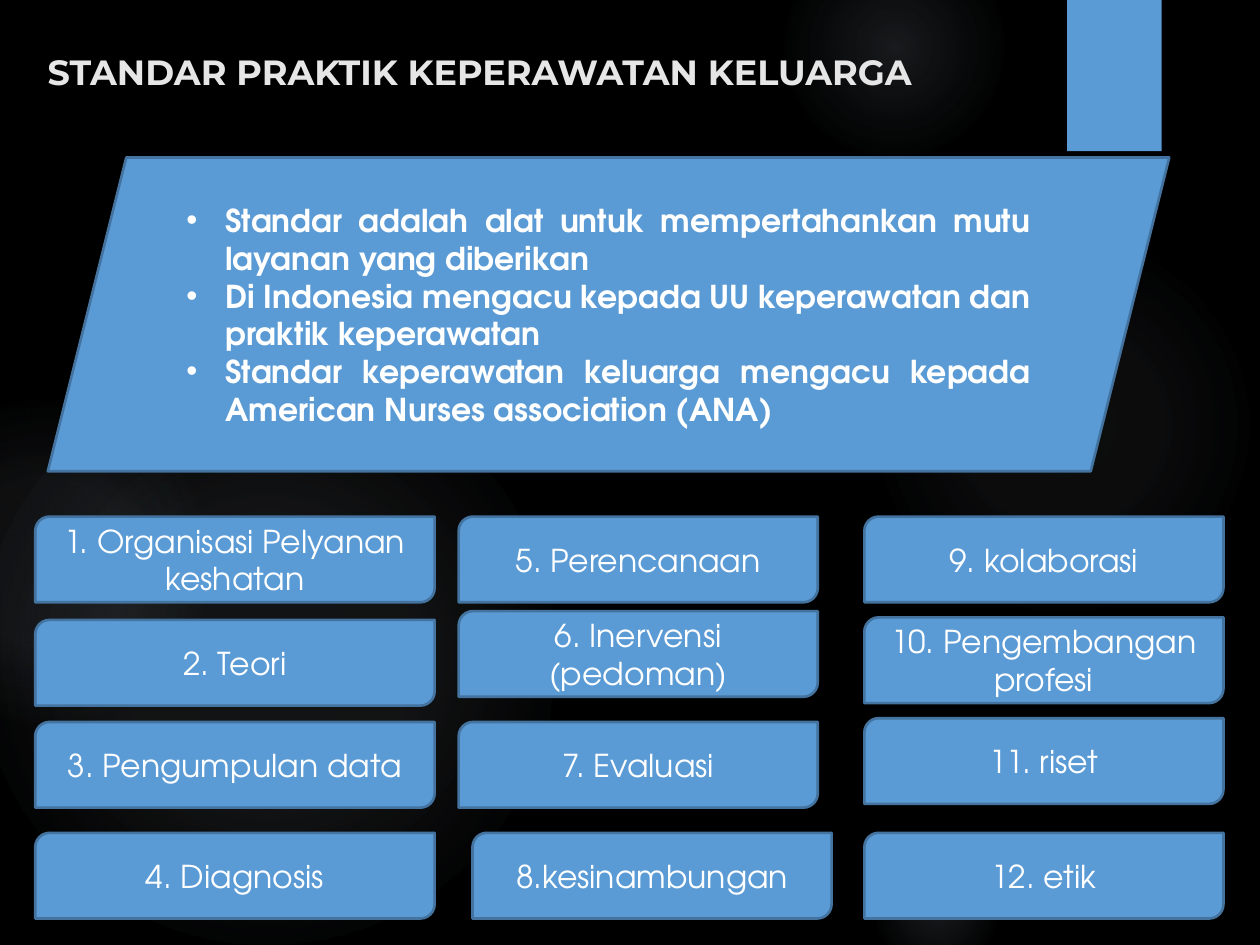
from dataclasses import dataclass

import pptx
import pptx.dml.color
import pptx.enum.shapes
import pptx.enum.text
import pptx.oxml
import pptx.oxml.ns
import pptx.util
from pptx.util import Inches

KIND = pptx.enum.shapes.MSO_SHAPE
ALIGN = pptx.enum.text.PP_ALIGN
ANCHOR = pptx.enum.text.MSO_ANCHOR
NS = pptx.oxml.ns.nsdecls("a")
BODY = "TeX Gyre Adventor"
BLUE, EDGE, WHITE, GLOW = "5B9BD5", "43739E", "FFFFFF", "ADB9CA"


@dataclass
class Box:
    left: float
    top: float
    width: float
    height: float


@dataclass
class Orb:
    left: float
    top: float
    size: float
    stops: tuple


@dataclass
class Column:
    left: float
    width: float
    cards: tuple


ORBS = (
    Orb(6.89, 1.83, 3.08, ((0, 7), (36, 6), (69, 0))),
    Orb(6.22, -0.5, 1.75, ((0, 14), (36, 7), (73, 0))),
    Orb(6.89, 6.67, 1.08, ((0, 14), (36, 7), (66, 0))),
    Orb(-0.17, 2.92, 4.58, ((0, 11), (36, 10), (75, 0))),
    Orb(-0.92, 3.17, 2.58, ((0, 8), (36, 8), (72, 0))),
)
POINTS = (
    "Standar adalah alat untuk mempertahankan mutu layanan yang diberikan",
    "Di Indonesia mengacu kepada UU keperawatan dan praktik keperawatan",
    "Standar keperawatan keluarga mengacu kepada American Nurses association (ANA)",
)
COLUMNS = (
    Column(0.28, 3.17, (
        ("1. Organisasi Pelyanan keshatan", 4.1, 0),
        ("2. Teori", 4.92, 0),
        ("3. Pengumpulan data", 5.73, 0),
        ("4. Diagnosis", 6.61, 0))),
    Column(3.64, 2.85, (
        ("5. Perencanaan", 4.1, 0),
        ("6. Inervensi (pedoman)", 4.85, 0),
        ("7. Evaluasi", 5.73, 0),
        ("8.kesinambungan", 6.61, 0.11))),
    Column(6.86, 2.85, (
        ("9. kolaborasi", 4.1, 0),
        ("10. Pengembangan profesi", 4.9, 0),
        ("11. riset", 5.7, 0),
        ("12. etik", 6.61, 0))),
)


def color(code: str) -> pptx.dml.color.RGBColor:
    return pptx.dml.color.RGBColor.from_string(code)


def place(slide, kind, box: Box, edge: str = ""):
    shape = slide.shapes.add_shape(
        kind, Inches(box.left), Inches(box.top), Inches(box.width), Inches(box.height))
    shape.shadow.inherit = False
    shape.fill.solid()
    shape.fill.fore_color.rgb = color(BLUE)
    if edge:
        shape.line.color.rgb = color(edge)
        shape.line.width = pptx.util.Pt(1.5)
    else:
        shape.line.fill.background()
    return shape


def style(frame, size: float, name: str, code: str, bold: bool, align) -> None:
    frame.word_wrap = True
    for para in frame.paragraphs:
        para.alignment = align
        for run in para.runs:
            font = run.font
            font.size, font.name, font.bold = pptx.util.Pt(size), name, bold
            font.color.rgb = color(code)


def draw_orb(slide, orb: Orb) -> None:
    shape = place(slide, KIND.OVAL, Box(orb.left, orb.top, orb.size, orb.size))
    stops = "".join(
        f'<a:gs pos="{pos * 1000}"><a:srgbClr val="{GLOW}">'
        f'<a:alpha val="{alpha * 1000}"/></a:srgbClr></a:gs>'
        for pos, alpha in orb.stops)
    grad = pptx.oxml.parse_xml(
        f'<a:gradFill {NS} rotWithShape="1"><a:gsLst>{stops}</a:gsLst>'
        '<a:path path="circle"><a:fillToRect l="50000" t="50000" r="50000" b="50000"/>'
        '</a:path></a:gradFill>')
    props = shape._element.spPr
    props.replace(props.find(pptx.oxml.ns.qn("a:solidFill")), grad)


def draw_tab(slide) -> None:
    shape = place(slide, KIND.RECTANGLE, Box(8.47, 0, 0.75, 1.2))
    shade = pptx.oxml.parse_xml(
        f'<a:outerShdw {NS} blurRad="{pptx.util.Pt(3)}" dist="{pptx.util.Pt(2)}" '
        'dir="5400000" rotWithShape="0"><a:srgbClr val="000000">'
        '<a:alpha val="45000"/></a:srgbClr></a:outerShdw>')
    shape._element.spPr.find(pptx.oxml.ns.qn("a:effectLst")).append(shade)


def draw_title(slide) -> None:
    box = slide.shapes.add_textbox(Inches(0.28), Inches(0.35), Inches(7.72), Inches(0.55))
    box.text_frame.text = "STANDAR PRAKTIK KEPERAWATAN KELUARGA"
    style(box.text_frame, 20, "Montserrat", "E7E6E6", True, ALIGN.LEFT)


def draw_panel(slide) -> None:
    frame = place(slide, KIND.PARALLELOGRAM, Box(0.38, 1.25, 8.9, 2.49), EDGE).text_frame
    frame.text = "\n".join(POINTS)
    frame.vertical_anchor = ANCHOR.MIDDLE
    style(frame, 18, BODY, WHITE, True, ALIGN.JUSTIFY)
    for para in frame.paragraphs:
        props = para._p.get_or_add_pPr()
        props.set("marL", str(Inches(0.31)))
        props.set("indent", str(-Inches(0.31)))
        props.append(pptx.oxml.parse_xml(f'<a:buFont {NS} typeface="Arial"/>'))
        props.append(pptx.oxml.parse_xml(f'<a:buChar {NS} char="•"/>'))


def draw_column(slide, col: Column) -> None:
    for text, top, shift in col.cards:
        box = Box(col.left + shift, top, col.width, 0.68)
        frame = place(slide, KIND.ROUND_2_DIAG_RECTANGLE, box, EDGE).text_frame
        frame.text = text
        frame.vertical_anchor = ANCHOR.MIDDLE
        style(frame, 18, BODY, WHITE, False, ALIGN.CENTER)


def main() -> None:
    deck = pptx.Presentation()
    deck.slide_width, deck.slide_height = Inches(10), Inches(7.5)
    slide = deck.slides.add_slide(deck.slide_layouts[6])
    slide.background.fill.solid()
    slide.background.fill.fore_color.rgb = color("000000")
    for orb in ORBS:
        draw_orb(slide, orb)
    draw_tab(slide)
    draw_title(slide)
    draw_panel(slide)
    for col in COLUMNS:
        draw_column(slide, col)
    deck.save("out.pptx")


if __name__ == "__main__":
    main()
